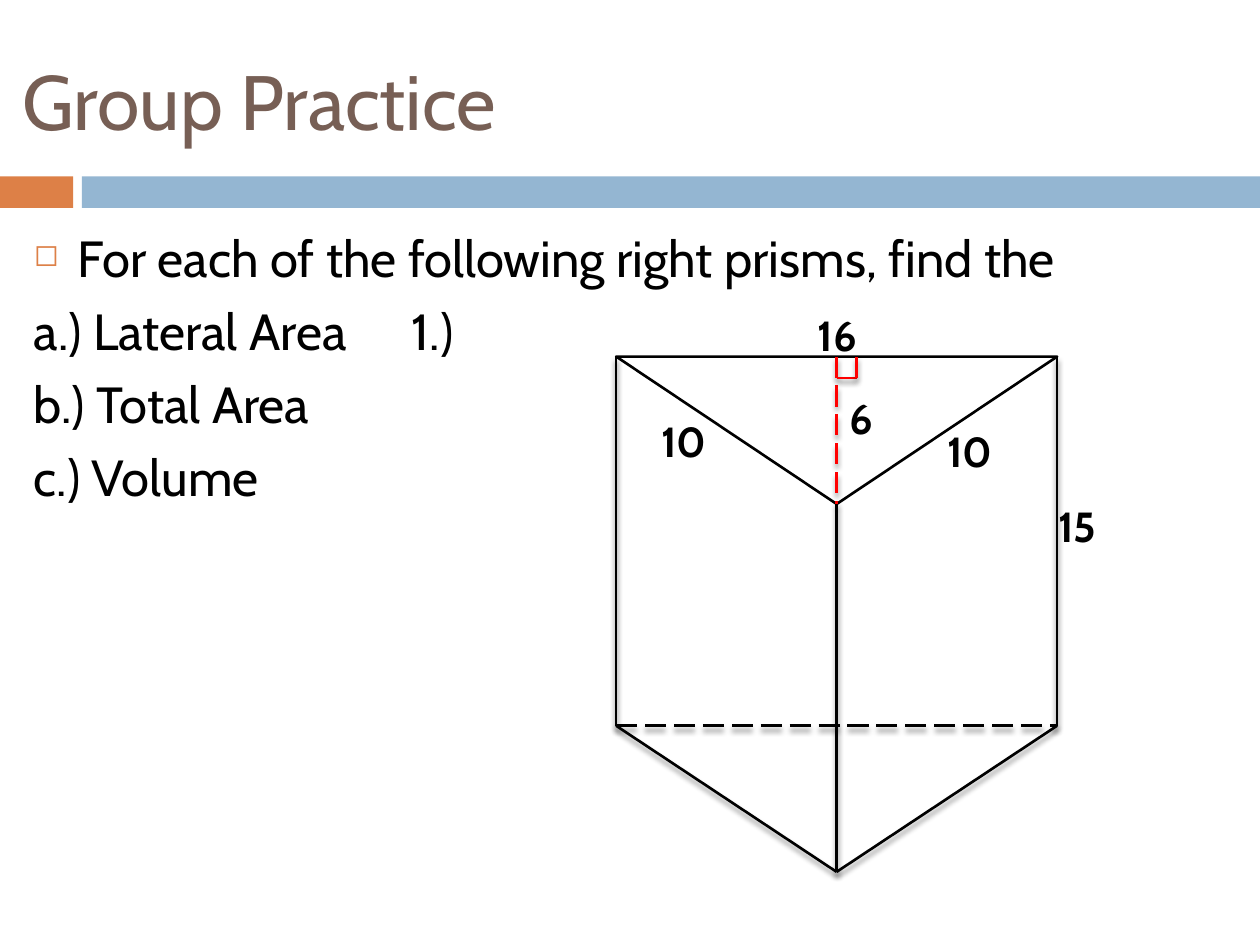
from dataclasses import dataclass

from lxml.etree import SubElement
from pptx import Presentation
from pptx.dml.color import RGBColor
from pptx.enum.dml import MSO_LINE
from pptx.enum.shapes import MSO_CONNECTOR, MSO_SHAPE
from pptx.enum.text import MSO_ANCHOR, MSO_AUTO_SIZE
from pptx.oxml.ns import qn
from pptx.util import Inches, Pt


@dataclass(frozen=True)
class Theme:
    font: str = "Cabin"
    title_color: str = "775F55"
    orange: str = "DD8047"
    blue: str = "94B6D2"
    black: str = "000000"
    white: str = "FFFFFF"
    red: str = "FF0000"
    title_size: float = 44
    body_size: float = 29
    label_size: float = 24
    line_width: float = 1.5
    body_spacing: float = 7


THEME = Theme()

# Prism geometry in inches
LEFT, MIDDLE, RIGHT = 4.89, 6.64, 8.39
BACK_TOP, FRONT_TOP = 2.83, 4.0
BACK_BOTTOM, FRONT_BOTTOM = 5.76, 6.92
MARK_RIGHT, MARK_BOTTOM = 6.8, 3.0


def add_text(slide, box, lines, *, size, color=THEME.black, bold=False,
             anchor=MSO_ANCHOR.TOP, space_before=0, grow=False):
    shape = slide.shapes.add_textbox(*map(Inches, box))
    frame = shape.text_frame
    frame.word_wrap = True
    frame.vertical_anchor = anchor
    frame.auto_size = MSO_AUTO_SIZE.SHAPE_TO_FIT_TEXT if grow else MSO_AUTO_SIZE.NONE
    for index, line in enumerate(lines):
        paragraph = frame.paragraphs[0] if index == 0 else frame.add_paragraph()
        paragraph.space_before = Pt(space_before)
        run = paragraph.add_run()
        run.text = line
        run.font.name = THEME.font
        run.font.size = Pt(size)
        run.font.bold = bold
        run.font.color.rgb = RGBColor.from_string(color)
    return shape


def add_bullet(paragraph, character, color, percent, indent):
    properties = paragraph._p.get_or_add_pPr()
    properties.set("marL", str(Inches(indent)))
    properties.set("indent", str(-Inches(indent)))
    bullet_color = SubElement(properties, qn("a:buClr"))
    SubElement(bullet_color, qn("a:srgbClr"), val=color)
    SubElement(properties, qn("a:buSzPct"), val=str(percent * 1000))
    SubElement(properties, qn("a:buChar"), char=character)


def add_filled_shape(shapes, kind, box, fill, outline=None):
    shape = shapes.add_shape(kind, *map(Inches, box))
    shape.shadow.inherit = False
    shape.fill.solid()
    shape.fill.fore_color.rgb = RGBColor.from_string(fill)
    if outline:
        shape.line.color.rgb = RGBColor.from_string(outline)
        shape.line.width = Pt(THEME.line_width)
    else:
        shape.line.fill.background()
    return shape


def add_edge(shapes, start, end, color=THEME.black, dashed=False):
    edge = shapes.add_connector(MSO_CONNECTOR.STRAIGHT, *map(Inches, start + end))
    edge.line.color.rgb = RGBColor.from_string(color)
    edge.line.width = Pt(THEME.line_width)
    if dashed:
        edge.line.dash_style = MSO_LINE.LONG_DASH
    # Soft shadow straight below the line
    effects = SubElement(edge._element.spPr, qn("a:effectLst"))
    shadow = SubElement(effects, qn("a:outerShdw"), blurRad=str(Pt(3)),
                        dist=str(Pt(2.4)), dir="5400000", rotWithShape="0")
    shadow_color = SubElement(shadow, qn("a:srgbClr"), val=THEME.black)
    SubElement(shadow_color, qn("a:alpha"), val="45000")


def add_prism(slide):
    shapes = slide.shapes.add_group_shape().shapes
    top = add_filled_shape(
        shapes, MSO_SHAPE.ISOSCELES_TRIANGLE,
        (LEFT, BACK_TOP, RIGHT - LEFT, FRONT_TOP - BACK_TOP),
        THEME.white, THEME.black)
    top.rotation = 180

    left, right = (LEFT, BACK_BOTTOM), (RIGHT, BACK_BOTTOM)
    front = (MIDDLE, FRONT_BOTTOM)
    # Upright edges, then the base
    add_edge(shapes, (LEFT, BACK_TOP), left)
    add_edge(shapes, (RIGHT, BACK_TOP), right)
    add_edge(shapes, (MIDDLE, FRONT_TOP), front)
    add_edge(shapes, left, front)
    add_edge(shapes, front, right)
    add_edge(shapes, left, right, dashed=True)


def add_height(slide):
    add_edge(slide.shapes, (MIDDLE, BACK_TOP), (MIDDLE, FRONT_TOP), THEME.red, dashed=True)
    # Right angle mark
    corner = (MARK_RIGHT, MARK_BOTTOM)
    add_edge(slide.shapes, (MIDDLE, MARK_BOTTOM), corner, THEME.red)
    add_edge(slide.shapes, corner, (MARK_RIGHT, BACK_TOP), THEME.red)


def main():
    presentation = Presentation()
    presentation.slide_width, presentation.slide_height = Inches(10), Inches(7.5)
    slide = presentation.slides.add_slide(presentation.slide_layouts[6])

    # Title band
    for left, width, color in ((0, 0.58, THEME.orange), (0.65, 9.35, THEME.blue)):
        add_filled_shape(slide.shapes, MSO_SHAPE.RECTANGLE, (left, 1.4, width, 0.25), color)
    add_text(slide, (0.08, 0.25, 9.5, 1.08), ["Group Practice"], size=THEME.title_size,
             color=THEME.title_color, anchor=MSO_ANCHOR.MIDDLE)

    # Task
    task = add_text(
        slide, (0.17, 1.75, 9.42, 5.58),
        ["For each of the following right prisms, find the",
         "a.) Lateral Area\t\t1.)", "b.) Total Area", "c.) Volume"],
        size=THEME.body_size, space_before=THEME.body_spacing)
    add_bullet(task.text_frame.paragraphs[0], "◻", THEME.orange, percent=60, indent=0.35)

    # Figure
    add_prism(slide)
    add_height(slide)

    # Measurements
    for text, left, top, width in (
            ("16", 6.39, 2.41, 1), ("6", 6.64, 3.07, 0.42), ("10", 7.42, 3.33, 0.7),
            ("10", 5.15, 3.25, 0.61), ("15", 8.3, 3.92, 0.58)):
        add_text(slide, (left, top, width, 0.5), [text], size=THEME.label_size,
                 bold=True, grow=True)

    presentation.save("out.pptx")


if __name__ == "__main__":
    main()
